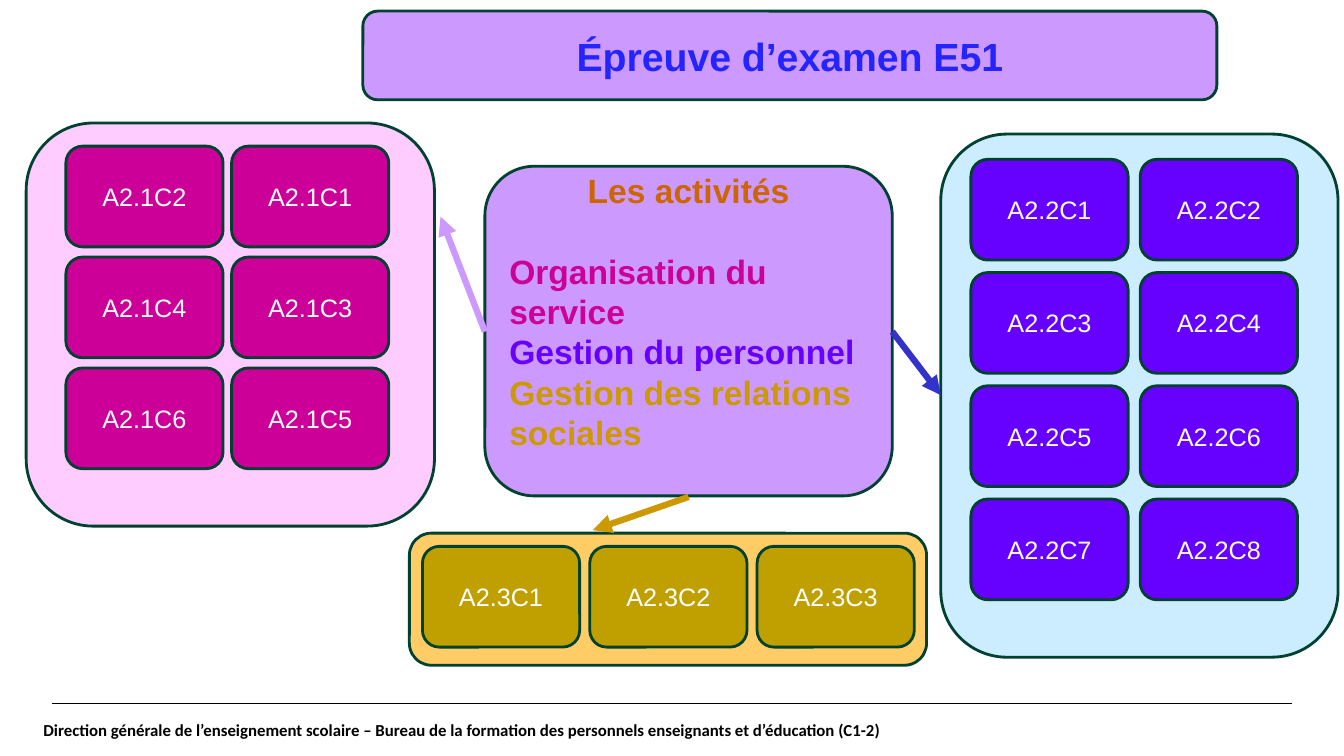
"""Build the E51 exam slide: activity summary linked to three groups of skills."""
from dataclasses import dataclass

from lxml import etree
from pptx import Presentation
from pptx.dml.color import RGBColor
from pptx.enum.shapes import MSO_CONNECTOR, MSO_SHAPE
from pptx.enum.text import MSO_ANCHOR, PP_ALIGN
from pptx.oxml.ns import qn
from pptx.util import Inches, Pt

ROUNDED = MSO_SHAPE.ROUNDED_RECTANGLE
STRAIGHT = MSO_CONNECTOR.STRAIGHT
MIDDLE = MSO_ANCHOR.MIDDLE
CENTER, LEFT = PP_ALIGN.CENTER, PP_ALIGN.LEFT

BLACK = RGBColor(0x00, 0x00, 0x00)
WHITE = RGBColor(0xFF, 0xFF, 0xFF)
OUTLINE = RGBColor(0x00, 0x41, 0x30)
LILAC = RGBColor(0xCC, 0x99, 0xFF)
TITLE_BLUE = RGBColor(0x24, 0x24, 0xFF)
ARROW_BLUE = RGBColor(0x33, 0x33, 0xCC)
BROWN = RGBColor(0xCC, 0x66, 0x00)
MAGENTA = RGBColor(0xCC, 0x00, 0x99)
VIOLET = RGBColor(0x66, 0x00, 0xFF)
GOLD = RGBColor(0xCC, 0x99, 0x00)
OLIVE = RGBColor(0xBF, 0xA0, 0x00)
PINK = RGBColor(0xFF, 0xCC, 0xFF)
PALE_BLUE = RGBColor(0xCC, 0xEC, 0xFF)
ORANGE = RGBColor(0xFF, 0xCC, 0x66)

WIDTH, HEIGHT = Inches(13.33), Inches(7.5)
TILE_W, TILE_H = 11.7, 13.33


@dataclass(frozen=True)
class Box:
    """Area in percent of the slide's width and height."""
    x: float
    y: float
    w: float
    h: float


@dataclass(frozen=True)
class Line:
    """Text of one paragraph with its look."""
    text: str
    size: float
    color: RGBColor
    bold: bool = True
    align: PP_ALIGN = CENTER
    font: str = "Arial"


@dataclass(frozen=True)
class Group:
    """Panel holding a grid of skill tiles."""
    panel: Box
    panel_fill: RGBColor
    tile_fill: RGBColor
    prefix: str
    numbers: tuple[int, ...]
    columns: int
    x: float
    y: float
    dx: float
    dy: float


@dataclass(frozen=True)
class Link:
    """Straight line between two points in percent of the slide."""
    x1: float
    y1: float
    x2: float
    y2: float
    color: RGBColor
    width: float = 4.5
    arrow: bool = True


GROUPS = (
    Group(Box(30.46, 70.53, 38.48, 17.47), ORANGE, OLIVE, "A2.3C", (1, 2, 3), 3,
          31.43, 72.27, 12.45, 0),
    Group(Box(70, 17.73, 29.56, 69.2), PALE_BLUE, VIOLET, "A2.2C", (1, 2, 3, 4, 5, 6, 7, 8), 2,
          72.24, 21.07, 12.6, 14.98),
    Group(Box(1.95, 16.27, 30.38, 53.33), PINK, MAGENTA, "A2.1C", (2, 1, 4, 3, 6, 5), 2,
          4.9, 19.33, 12.33, 14.67),
)
LINKS = (
    Link(3.9, 93.07, 96.1, 93.07, BLACK, 0.8, False),
    Link(36.08, 43.87, 32.78, 28.67, LILAC),
    Link(66.39, 43.87, 70, 52.27, ARROW_BLUE),
    Link(51.24, 65.73, 44.11, 70.13, GOLD),
)
TITLE = Line("Épreuve d’examen E51", 28, TITLE_BLUE)
ACTIVITIES = (
    Line("Les activités", 24, BROWN),
    Line("Organisation du service", 24, MAGENTA, align=LEFT),
    Line("Gestion du personnel", 24, VIOLET, align=LEFT),
    Line("Gestion des relations sociales", 24, GOLD, align=LEFT),
)
FOOTER = Line("Direction générale de l’enseignement scolaire – Bureau de la formation "
              "des personnels enseignants et d’éducation (C1-2)", 12, BLACK,
              align=LEFT, font="Calibri")


def px(share: float) -> int:
    """Horizontal percent to a length."""
    return round(WIDTH * share / 100)


def py(share: float) -> int:
    """Vertical percent to a length."""
    return round(HEIGHT * share / 100)


def area(box: Box) -> tuple[int, int, int, int]:
    """Left, top, width and height of a box."""
    return px(box.x), py(box.y), px(box.w), py(box.h)


def write(s, lines: tuple[Line, ...]):
    """Fill a shape with paragraphs and return its text frame."""
    tf = s.text_frame
    tf.word_wrap = True
    tf.vertical_anchor = MIDDLE
    for i, line in enumerate(lines):
        p = tf.add_paragraph() if i else tf.paragraphs[0]
        p.text = line.text
        p.alignment = line.align
        p.font.name = line.font
        p.font.size = Pt(line.size)
        p.font.bold = line.bold
        p.font.color.rgb = line.color
    return tf


def add_box(slide, box: Box, fill: RGBColor, lines: tuple[Line, ...] = ()):
    """Draw an outlined rounded box with optional text."""
    s = slide.shapes.add_shape(ROUNDED, *area(box))
    s.shadow.inherit = False
    s.fill.solid()
    s.fill.fore_color.rgb = fill
    s.line.color.rgb = OUTLINE
    s.line.width = Pt(2)
    if lines:
        write(s, lines)
    return s


def add_group(slide, group: Group) -> None:
    """Draw a panel and its tiles row by row."""
    add_box(slide, group.panel, group.panel_fill)
    for i, number in enumerate(group.numbers):
        row, col = divmod(i, group.columns)
        tile = Box(group.x + col * group.dx, group.y + row * group.dy, TILE_W, TILE_H)
        label = Line(f"{group.prefix}{number}", 18, WHITE, bold=False)
        add_box(slide, tile, group.tile_fill, (label,))


def add_link(slide, link: Link) -> None:
    """Draw a line, with an arrowhead at its end if asked."""
    s = slide.shapes.add_connector(STRAIGHT, px(link.x1), py(link.y1), px(link.x2), py(link.y2))
    s.line.color.rgb = link.color
    s.line.width = Pt(link.width)
    if link.arrow:
        etree.SubElement(s.line._get_or_add_ln(), qn("a:tailEnd"), type="triangle")
    etree.SubElement(s._element.spPr, qn("a:effectLst"))


def add_activities(slide) -> None:
    """Draw the central summary of activities."""
    s = add_box(slide, Box(36.08, 22, 30.31, 43.6), LILAC, ACTIVITIES)
    s.adjustments[0] = 0.15
    tf = s.text_frame
    tf.margin_top, tf.margin_bottom = 0, Inches(0.4)
    for p in tf.paragraphs:
        p.line_spacing = Pt(28.8)
    tf.paragraphs[1].space_before = Pt(28.8)


def add_footer(slide) -> None:
    """Write the footer without margins."""
    s = slide.shapes.add_textbox(*area(Box(3.23, 93.07, 94.07, 6.93)))
    tf = write(s, (FOOTER,))
    tf.margin_left = tf.margin_right = tf.margin_top = tf.margin_bottom = 0


def main() -> None:
    """Assemble and save the slide."""
    prs = Presentation()
    prs.slide_width, prs.slide_height = WIDTH, HEIGHT
    slide = prs.slides.add_slide(prs.slide_layouts[6])
    for group in GROUPS:
        add_group(slide, group)
    add_box(slide, Box(27, 1.47, 63.54, 11.73), LILAC, (TITLE,))
    add_activities(slide)
    for link in LINKS:
        add_link(slide, link)
    add_footer(slide)
    prs.save("out.pptx")


if __name__ == "__main__":
    main()
